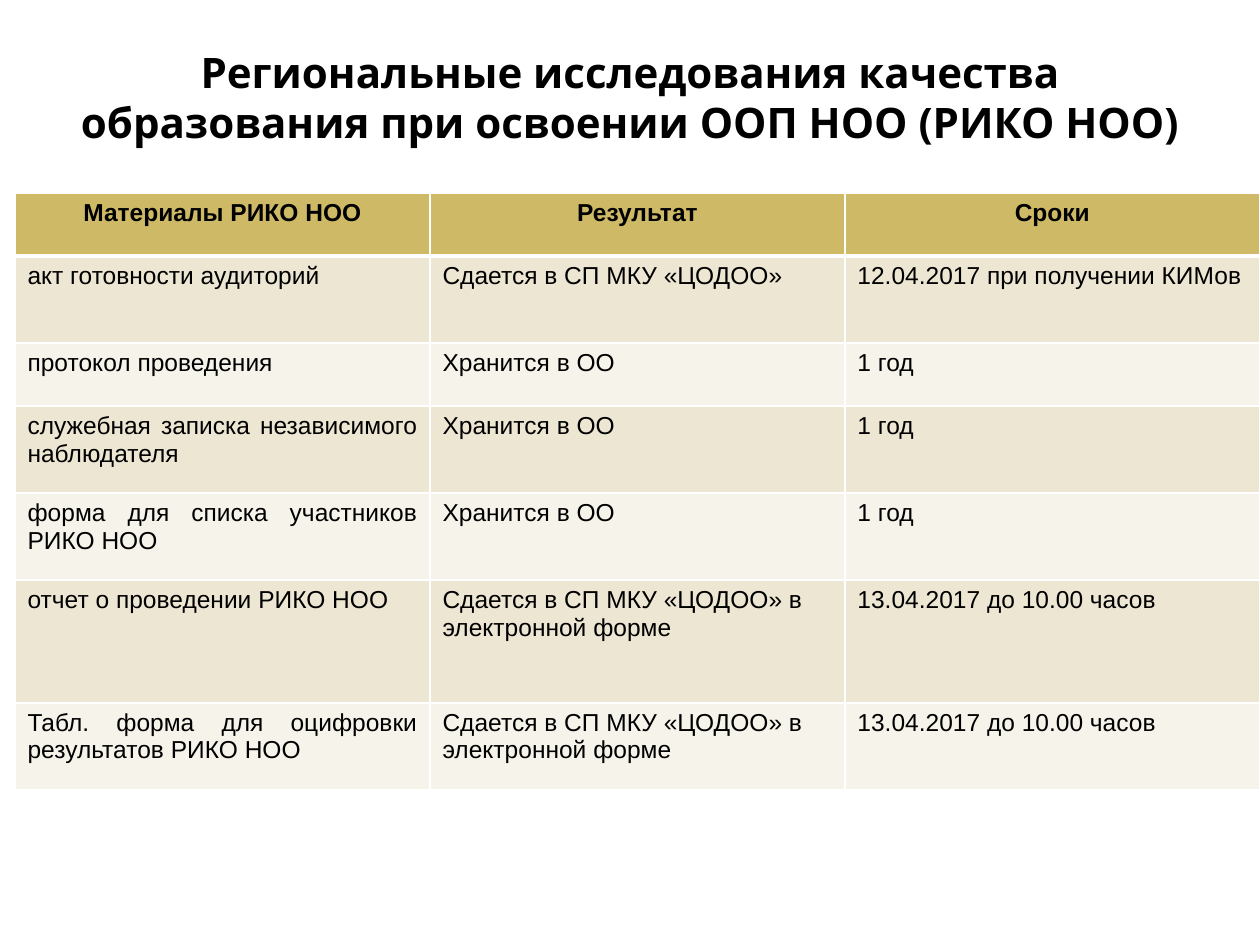
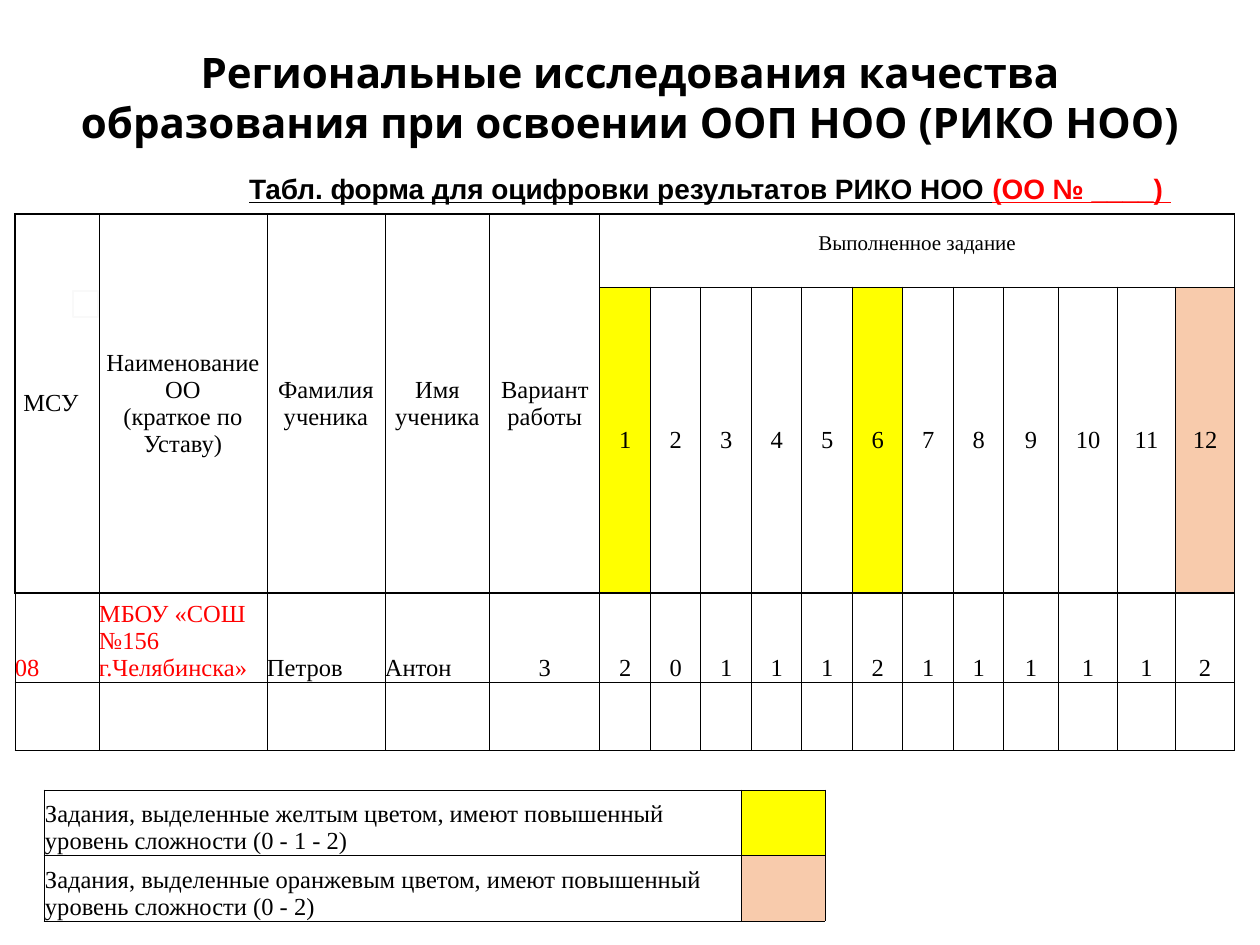
from lxml import etree
from pptx import Presentation
from pptx.dml.color import RGBColor
from pptx.enum.shapes import MSO_SHAPE
from pptx.enum.text import MSO_ANCHOR, PP_ALIGN
from pptx.oxml.ns import qn
from pptx.util import Emu, Pt

CENTER, LEFT, JUSTIFY = PP_ALIGN.CENTER, PP_ALIGN.LEFT, PP_ALIGN.JUSTIFY
TOP, MIDDLE, BOTTOM = MSO_ANCHOR.TOP, MSO_ANCHOR.MIDDLE, MSO_ANCHOR.BOTTOM
SQUARE = MSO_SHAPE.RECTANGLE

COLORS = {
    "ink": "000000", "paper": "FFFFFF", "red": "FF0000",
    "gold": "CEB966", "sand": "EDE6D3", "cream": "F6F3EA",
    "yellow": "FFFF00", "orange": "F8CBAC", "faint": "F9F9F9",
}
TITLE_FONT, SANS, SERIF = "Open Sans", "Arial", "Times New Roman"

# Content
TITLE = "Региональные исследования качества образования при освоении ООП НОО (РИКО НОО)"

MATERIALS_HEAD = ("Материалы РИКО НОО", "Результат", "Сроки")
MATERIALS = [
    ("акт готовности аудиторий", "Сдается в СП МКУ «ЦОДОО»",
     "12.04.2017 при получении КИМов"),
    ("протокол проведения", "Хранится в ОО", "1 год"),
    ("служебная записка независимого наблюдателя", "Хранится в ОО", "1 год"),
    ("форма для списка участников РИКО НОО", "Хранится в ОО", "1 год"),
    ("отчет о проведении РИКО НОО", "Сдается в СП МКУ «ЦОДОО» в электронной форме",
     "13.04.2017 до 10.00 часов"),
    ("Табл. форма для оцифровки результатов РИКО НОО",
     "Сдается в СП МКУ «ЦОДОО» в электронной форме", "13.04.2017 до 10.00 часов"),
]
MATERIALS_COLS = [415] * 3
MATERIALS_ROWS = [63, 87, 63, 87, 87, 123, 87]

FORM_HEADING = [("Табл. форма для оцифровки результатов РИКО НОО ", "ink"),
                ("(ОО № ____) ", "red")]
PUPIL_HEADS = ["МСУ", "Наименование ОО\n(краткое по Уставу)", "Фамилия ученика",
               "Имя ученика", "Вариант работы"]
TASKS_HEAD = "Выполненное задание"
TASK_COUNT = 12
TASK_FILLS = {1: "yellow", 6: "yellow", 12: "orange"}
PUPIL = ["08", "МБОУ «СОШ №156 г.Челябинска»", "Петров", "Антон", "3"]
SCORES = [2, 0, 1, 1, 1, 2, 1, 1, 1, 1, 1, 2]
FORM_COLS = [84, 168, 118, 105, 110] + [51, 50] * 4 + [55, 59, 58, 59]
FORM_ROWS = [73, 306, 89, 69]

LEGEND = [
    ("Задания, выделенные желтым цветом, имеют повышенный уровень сложности (0 - 1 - 2)",
     "yellow"),
    ("Задания, выделенные оранжевым цветом, имеют повышенный уровень сложности (0 - 2)",
     "orange"),
]
LEGEND_COLS, LEGEND_ROWS = [697, 84], [65, 66]


# Shared helpers
def px(n):
    return Emu(round(n * 914400 / 126))


def rgb(name):
    return RGBColor.from_string(COLORS[name])


def add_run(paragraph, text, font, size, color="ink", bold=False, underline=False):
    run = paragraph.add_run()
    run.text = text
    run.font.name, run.font.size = font, Pt(size)
    run.font.bold, run.font.underline = bold, underline
    run.font.color.rgb = rgb(color)


def add_text_box(slide, box, anchor):
    frame = slide.shapes.add_textbox(*map(px, box)).text_frame
    frame.word_wrap = True
    frame.vertical_anchor = anchor
    frame.paragraphs[0].alignment = CENTER
    return frame


def add_titled_slide(prs):
    slide = prs.slides.add_slide(prs.slide_layouts[6])
    frame = add_text_box(slide, (63, 38, 1134, 117), MIDDLE)
    frame.margin_top = frame.margin_bottom = px(13)
    add_run(frame.paragraphs[0], TITLE, TITLE_FONT, 24, bold=True)
    return slide


def add_grid(slide, left, top, cols, rows):
    table = slide.shapes.add_table(len(rows), len(cols), px(left), px(top),
                                   px(sum(cols)), px(sum(rows))).table
    table.first_row = table.horz_banding = False
    for column, width in zip(table.columns, cols):
        column.width = px(width)
    for row, height in zip(table.rows, rows):
        row.height = px(height)
    return table


def style_cell(cell, line, fill=None, left=.5, right=.5, top=.5, bottom=.5):
    props = cell._tc.get_or_add_tcPr()
    for side, width in zip("LRTB", (left, right, top, bottom)):
        border = etree.SubElement(props, qn(f"a:ln{side}"), w=str(Pt(width)))
        solid = etree.SubElement(border, qn("a:solidFill"))
        etree.SubElement(solid, qn("a:srgbClr"), val=COLORS[line])
    if fill:
        cell.fill.solid()
        cell.fill.fore_color.rgb = rgb(fill)
    else:
        cell.fill.background()


def write_cell(cell, text, align, anchor, font=SERIF, size=14, color="ink",
               bold=False, margins=None):
    cell.vertical_anchor = anchor
    if margins:
        (cell.margin_left, cell.margin_top,
         cell.margin_right, cell.margin_bottom) = map(px, margins)
    for i, part in enumerate(text.split("\n")):
        frame = cell.text_frame
        paragraph = frame.add_paragraph() if i else frame.paragraphs[0]
        paragraph.alignment = align
        add_run(paragraph, part, font, size, color, bold)


# Slide 1: materials, results and dates
def build_materials(prs):
    slide = add_titled_slide(prs)
    table = add_grid(slide, 15, 193, MATERIALS_COLS, MATERIALS_ROWS)
    for r, row in enumerate([MATERIALS_HEAD] + MATERIALS):
        head = r == 0
        fill = "gold" if head else ("cream", "sand")[r % 2]
        for c, text in enumerate(row):
            cell = table.cell(r, c)
            style_cell(cell, "paper", fill, 1, 1, 3 if r == 1 else 1, 3 if head else 1)
            align = CENTER if head else JUSTIFY if c == 0 else LEFT
            write_cell(cell, text, align, TOP, SANS, bold=head)


# Slide 2: form for digitising the results
def build_form(prs):
    slide = add_titled_slide(prs)

    marker = slide.shapes.add_shape(SQUARE, px(73), px(291), px(25), px(26))
    marker.shadow.inherit = False
    marker.fill.background()
    marker.line.color.rgb = rgb("faint")
    marker.line.width = Pt(.75)

    heading = add_text_box(slide, (194, 165, 1032, 47), TOP).paragraphs[0]
    for text, color in FORM_HEADING:
        add_run(heading, text, SANS, 16, color, bold=True, underline=True)

    # Ruled grid with merged headings
    table = add_grid(slide, 15, 214, FORM_COLS, FORM_ROWS)
    first_task, last = len(PUPIL_HEADS), len(FORM_COLS) - 1
    for r in range(len(FORM_ROWS)):
        for c in range(len(FORM_COLS)):
            fill = TASK_FILLS.get(c - first_task + 1) if r == 1 else None
            style_cell(table.cell(r, c), "ink", fill,
                       left=1 if c == 0 and r < 2 else .5,
                       right=1 if c == last and r < 2 else .5,
                       top=1 if r in (0, 2) else .5,
                       bottom=1 if r == 1 else .5)
    for c, text in enumerate(PUPIL_HEADS):
        table.cell(0, c).merge(table.cell(1, c))
        write_cell(table.cell(0, c), text, CENTER, MIDDLE,
                   margins=(0, 0, 0 if c else 12, 0))
    table.cell(0, first_task).merge(table.cell(0, last))
    write_cell(table.cell(0, first_task), TASKS_HEAD, CENTER, BOTTOM, size=12,
               margins=(0, 0, 0, 32))
    for task in range(1, TASK_COUNT + 1):
        write_cell(table.cell(1, first_task + task - 1), str(task), CENTER, MIDDLE,
                   margins=(0, 0, 0, 0))

    # Sample pupil
    for c, value in enumerate(PUPIL + SCORES):
        write_cell(table.cell(2, c), str(value), LEFT if c < 4 else CENTER, BOTTOM,
                   color="red" if c < 2 else "ink", margins=(0, 0, 0, 0))

    # Colour legend
    legend = add_grid(slide, 44, 790, LEGEND_COLS, LEGEND_ROWS)
    for r, (text, swatch) in enumerate(LEGEND):
        style_cell(legend.cell(r, 0), "ink")
        write_cell(legend.cell(r, 0), text, LEFT, BOTTOM, margins=(1, 1, 1, 0))
        style_cell(legend.cell(r, 1), "ink", swatch)


def main():
    prs = Presentation()
    prs.slide_width, prs.slide_height = px(1260), px(945)
    build_materials(prs)
    build_form(prs)
    prs.save("out.pptx")


if __name__ == "__main__":
    main()
